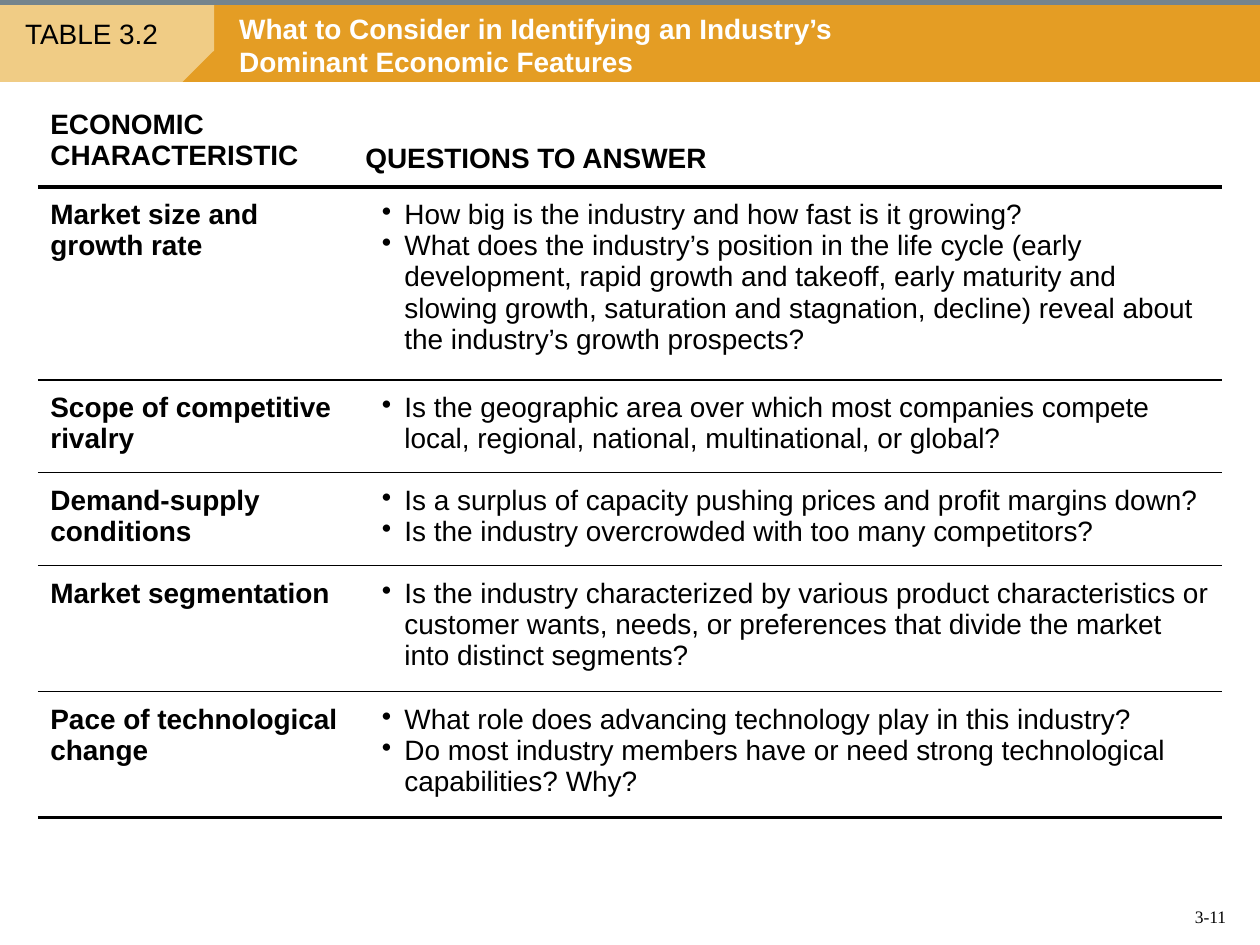
from lxml import etree
from pptx import Presentation
from pptx.dml.color import RGBColor
from pptx.enum.shapes import MSO_CONNECTOR, MSO_SHAPE
from pptx.enum.text import MSO_ANCHOR, PP_ALIGN
from pptx.oxml.ns import qn
from pptx.util import Inches, Pt

LINE = MSO_CONNECTOR.STRAIGHT
RECTANGLE, SNIPPED = MSO_SHAPE.RECTANGLE, MSO_SHAPE.SNIP_1_RECTANGLE
TOP, MIDDLE, BOTTOM = MSO_ANCHOR.TOP, MSO_ANCHOR.MIDDLE, MSO_ANCHOR.BOTTOM
LEFT, RIGHT = PP_ALIGN.LEFT, PP_ALIGN.RIGHT
THIN, THICK = 1, 2.25
HEADINGS = ["ECONOMIC CHARACTERISTIC", "QUESTIONS TO ANSWER"]
FEATURES = [
    ("Market size and growth rate", [
        "How big is the industry and how fast is it growing?",
        "What does the industry’s position in the life cycle (early development, "
        "rapid growth and takeoff, early maturity and slowing growth, saturation "
        "and stagnation, decline) reveal about the industry’s growth prospects?"]),
    ("Scope of competitive rivalry", [
        "Is the geographic area over which most companies compete local, regional, "
        "national, multinational, or global?"]),
    ("Demand-supply conditions", [
        "Is a surplus of capacity pushing prices and profit margins down?",
        "Is the industry overcrowded with too many competitors?"]),
    ("Market segmentation", [
        "Is the industry characterized by various product characteristics or "
        "customer wants, needs, or preferences that divide the market into "
        "distinct segments?"]),
    ("Pace of technological change", [
        "What role does advancing technology play in this industry?",
        "Do most industry members have or need strong technological capabilities? Why?"]),
]
COLUMN_WIDTHS = [2.5, 6.9]
ROW_HEIGHTS = [0.73, 1.53, 0.73, 0.74, 1, 1]


def color(value):
    return RGBColor.from_string(value)


class SlideBuilder:
    """Holds the slide and its text style, and adds each kind of element."""

    def __init__(self, slide, font="Arial", size=16, ink="000000"):
        self.slide, self.font, self.size, self.ink = slide, font, size, ink

    def style(self, paragraph, bold=False, font=None, size=None, ink=None):
        paragraph.font.name = font or self.font
        paragraph.font.size = Pt(size or self.size)
        paragraph.font.bold = bold
        paragraph.font.color.rgb = color(ink or self.ink)

    def panel(self, kind, left, top, width, height, fill):
        panel = self.slide.shapes.add_shape(
            kind, Inches(left), Inches(top), Inches(width), Inches(height))
        panel.shadow.inherit = False
        panel.fill.solid()
        panel.fill.fore_color.rgb = color(fill)
        panel.line.fill.background()
        return panel

    def rule(self, x1, y1, x2, y2, ink, weight):
        rule = self.slide.shapes.add_connector(
            LINE, Inches(x1), Inches(y1), Inches(x2), Inches(y2))
        rule.line.color.rgb = color(ink)
        rule.line.width = Pt(weight)
        etree.SubElement(rule._element.spPr, qn("a:effectLst"))

    def text(self, words, left, top, width, height, margin=0.1, anchor=TOP,
             align=LEFT, **look):
        frame = self.slide.shapes.add_textbox(
            Inches(left), Inches(top), Inches(width), Inches(height)).text_frame
        frame.word_wrap = True
        frame.vertical_anchor = anchor
        frame.margin_left = frame.margin_right = Inches(margin)
        paragraph = frame.paragraphs[0]
        paragraph.text = words
        paragraph.alignment = align
        self.style(paragraph, **look)

    def bullet(self, paragraph):
        properties = paragraph._p.get_or_add_pPr()
        properties.set("marL", str(Inches(0.31)))
        properties.set("indent", str(Inches(-0.18)))
        mark = etree.Element(qn("a:buChar"), char="•")
        properties.insert(0, mark)

    def border(self, cell, side, weight):
        properties = cell._tc.get_or_add_tcPr()
        line = etree.SubElement(properties, qn(f"a:{side}"), w=str(Pt(weight)))
        if not weight:
            etree.SubElement(line, qn("a:noFill"))
            return
        fill = etree.SubElement(line, qn("a:solidFill"))
        etree.SubElement(fill, qn("a:srgbClr"), val=self.ink)

    def cell(self, cell, lines, bold, bulleted, anchor, above, below):
        cell.margin_left = cell.margin_right = Inches(0.1)
        cell.margin_top = cell.margin_bottom = Inches(0.1)
        cell.vertical_anchor = anchor
        cell.text = "\n".join(lines)
        for paragraph in cell.text_frame.paragraphs:
            self.style(paragraph, bold)
            if bulleted:
                self.bullet(paragraph)
        for side, weight in zip(("lnL", "lnR", "lnT", "lnB"), (0, 0, above, below)):
            self.border(cell, side, weight)
        cell.fill.background()

    def table(self, headings, features, left, top, widths, heights):
        table = self.slide.shapes.add_table(
            len(heights), len(widths), Inches(left), Inches(top),
            Inches(sum(widths)), Inches(sum(heights))).table
        table.first_row = table.horz_banding = False
        for column, width in zip(table.columns, widths):
            column.width = Inches(width)
        for row, height in zip(table.rows, heights):
            row.height = Inches(height)
        for column, (heading, anchor) in enumerate(zip(headings, (MIDDLE, BOTTOM))):
            self.cell(table.cell(0, column), [heading], True, False, anchor, 0, THICK)
        for row, (feature, questions) in enumerate(features, 1):
            above = THICK if row == 1 else THIN
            below = THICK if row == len(features) else THIN
            self.cell(table.cell(row, 0), [feature], True, False, TOP, above, below)
            self.cell(table.cell(row, 1), questions, False, True, TOP, above, below)


def main():
    presentation = Presentation()
    presentation.slide_width, presentation.slide_height = Inches(10), Inches(7.5)
    builder = SlideBuilder(presentation.slides.add_slide(presentation.slide_layouts[6]))
    builder.panel(RECTANGLE, 1.4, 0.04, 8.6, 0.61, "E49D24")
    tab = builder.panel(SNIPPED, 0, 0.04, 1.7, 0.61, "F0CC85")
    tab.adjustments[0] = 0.41
    tab._element.spPr.find(qn("a:xfrm")).set("flipV", "1")
    builder.rule(0, 0.02, 10, 0.02, "74848D", 3)
    builder.text("3-11", 7.43, 7.03, 2.4, 0.38, anchor=BOTTOM, align=RIGHT,
                 font="Times New Roman", size=10)
    builder.text("TABLE 3.2", 0.2, 0.08, 1.5, 0.37, margin=0)
    builder.text("What to Consider in Identifying an Industry’s Dominant Economic Features",
                 1.8, 0.04, 5.48, 0.64, bold=True, ink="FFFFFF")
    builder.table(HEADINGS, FEATURES, 0.3, 0.75, COLUMN_WIDTHS, ROW_HEIGHTS)
    presentation.save("out.pptx")


if __name__ == "__main__":
    main()
